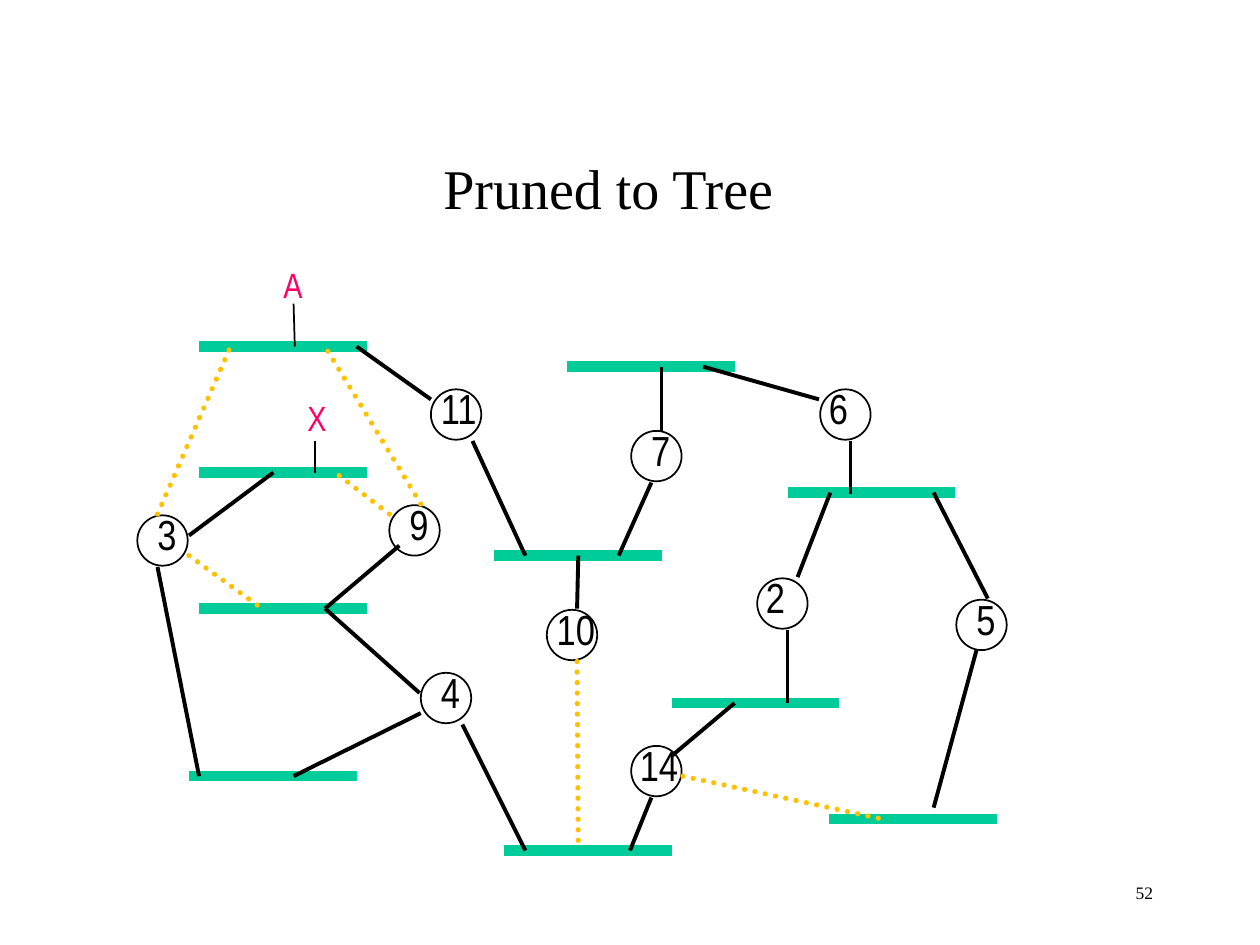
from pptx import Presentation
from pptx.dml.color import RGBColor
from pptx.enum.dml import MSO_LINE
from pptx.enum.shapes import MSO_CONNECTOR, MSO_SHAPE
from pptx.enum.text import MSO_ANCHOR, MSO_AUTO_SIZE, PP_ALIGN
from pptx.oxml.ns import qn
from pptx.util import Cm, Pt
from lxml.etree import SubElement

BLACK = RGBColor(0x00, 0x00, 0x00)
GREEN = RGBColor(0x00, 0xCC, 0x99)
GOLD = RGBColor(0xFF, 0xC0, 0x00)
PINK = RGBColor(0xFF, 0x00, 0x66)
SERIF = "Times New Roman"
NARROW = "Arial Narrow"
UNIT = 2.54
RING = 0.4
BAR = 1.33

BARS = [(1.58, 2.75), (1.58, 3.75), (1.58, 4.83), (4.5, 2.91), (6.25, 3.91),
        (3.92, 4.41), (1.5, 6.16), (5.33, 5.58), (4, 6.75), (6.58, 6.5)]

NODES = [("11", 3.42, 3.09, -0.02), ("4", 3.34, 5.34, 0.06),
         ("3", 1.09, 4.09, 0.06), ("7", 5.01, 3.42, 0.06),
         ("2", 6.01, 4.59, -0.03), ("14", 5.01, 5.92, -0.03),
         ("10", 4.34, 4.84, -0.02), ("9", 3.09, 4.01, 0.06),
         ("5", 7.59, 4.76, 0.06), ("6", 6.51, 3.09, -0.03)]

EDGES = [(1.5, 4.25, 2.17, 3.75), (1.25, 4.5, 1.58, 6.16),
         (3.17, 4.33, 2.58, 4.83), (3.75, 3.5, 4.17, 4.41),
         (3.42, 3.17, 2.83, 2.75), (5.17, 3.83, 4.91, 4.41),
         (5.25, 3.42, 5.25, 2.91), (6.5, 3.17, 5.58, 2.91),
         (6.75, 3.92, 6.75, 3.5), (6.59, 3.91, 6.33, 4.58),
         (4.58, 4.83, 4.59, 4.41), (2.58, 4.83, 3.33, 5.5),
         (3.34, 5.66, 2.33, 6.16), (3.67, 5.75, 4.17, 6.75),
         (5.17, 6.33, 5, 6.75), (5.33, 6, 5.83, 5.58),
         (7.75, 5.16, 7.41, 6.41), (7.84, 4.75, 7.41, 3.91),
         (6.25, 5, 6.25, 5.58)]

CUTS = [(1.25, 4.08, 1.83, 2.75), (1.5, 4.41, 2.08, 4.83),
        (3.09, 4.08, 2.66, 3.75), (3.34, 4, 2.58, 2.75),
        (4.58, 5.25, 4.59, 6.75), (5.42, 6.16, 7, 6.5)]

TAGS = [("A", 2.15, 2.1, (2.33, 2.41, 2.34, 2.75)),
        ("X", 2.34, 3.16, (2.5, 3.5, 2.5, 3.75))]


def scale(*sides):
    return [Cm(side * UNIT) for side in sides]


def write(frame, text, *, size, font=NARROW, color=BLACK, align=PP_ALIGN.LEFT,
          lead=None, before=None):
    para = frame.paragraphs[0]
    para.alignment = align
    para.line_spacing = lead
    para.space_before = before
    run = para.add_run()
    run.text = text
    run.font.size = Pt(size)
    run.font.name = font
    run.font.color.rgb = color


class Board:
    """Draws the parts of the graph on one slide in a shared style."""

    def __init__(self, slide):
        self.shapes = slide.shapes

    def line(self, ends, color=BLACK, width=2.25, dots=False):
        line = self.shapes.add_connector(MSO_CONNECTOR.STRAIGHT, *scale(*ends))
        line.line.color.rgb = color
        line.line.width = Pt(width)
        props = line._element.spPr
        if dots:
            line.line.dash_style = MSO_LINE.ROUND_DOT
            props.find(qn("a:ln")).set("cap", "rnd")
        SubElement(props, qn("a:effectLst"))

    def ring(self, left, top):
        ring = self.shapes.add_shape(
            MSO_SHAPE.OVAL, *scale(left, top, RING, RING))
        ring.shadow.inherit = False
        ring.fill.background()
        ring.line.color.rgb = BLACK
        ring.line.width = Pt(1)

    def text(self, text, place, grow=True, **form):
        frame = self.shapes.add_textbox(*scale(*place)).text_frame
        frame.word_wrap = False
        if grow:
            frame.auto_size = MSO_AUTO_SIZE.SHAPE_TO_FIT_TEXT
        else:
            frame.auto_size = MSO_AUTO_SIZE.NONE
            frame.vertical_anchor = MSO_ANCHOR.MIDDLE
        write(frame, text, **form)

    def label(self, text, place, **form):
        self.text(text, place, lead=0.82, before=Pt(7.2), **form)


def main():
    deck = Presentation()
    deck.slide_width, deck.slide_height = scale(10, 7.5)
    board = Board(deck.slides.add_slide(deck.slide_layouts[6]))

    board.text("52", (7.08, 6.83, 2.17, 0.5), grow=False, size=10,
               font=SERIF, align=PP_ALIGN.RIGHT)
    for left, top in BARS:
        board.line((left, top, left + BAR, top), GREEN, 6)
    for name, left, top, shift in NODES:
        board.ring(left, top)
    for ends in CUTS:
        board.line(ends, GOLD, 3, dots=True)
    for ends in EDGES:
        board.line(ends)
    for name, left, top, shift in NODES:
        width = 0.2 + 0.17 * len(name)
        board.label(name, (left + shift, top - 0.03, width, 0.5), size=24)
    for name, left, top, stem in TAGS:
        board.label(name, (left, top, 0.35, 0.37), size=20, color=PINK)
        board.line(stem, width=1)
    board.text("Pruned to Tree", (3.42, 1.17, 2.84, 0.64), size=32, font=SERIF)

    deck.save("out.pptx")


if __name__ == "__main__":
    main()
